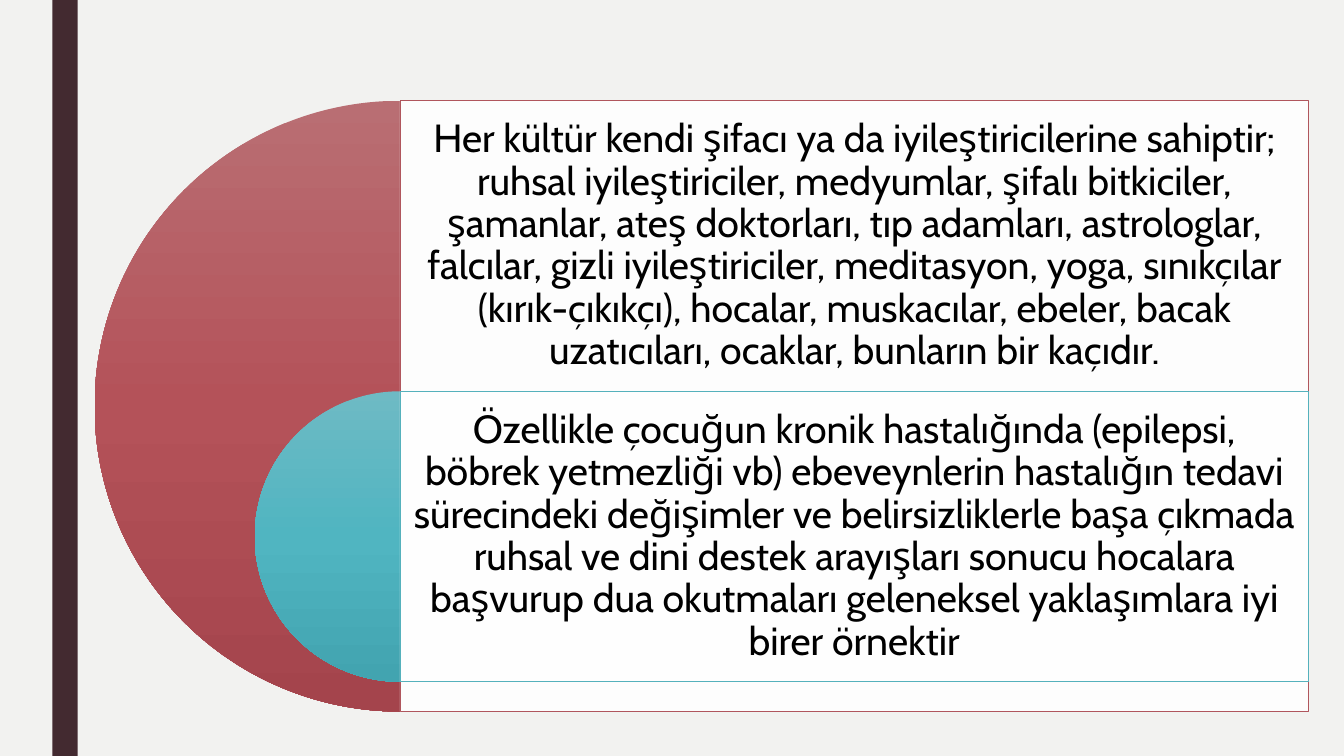
import copy
from dataclasses import dataclass

import pptx
import pptx.dml.color
import pptx.enum.shapes
import pptx.enum.text
import pptx.oxml.ns
import pptx.presentation
import pptx.shapes.autoshape
import pptx.slide
import pptx.util

Cm = pptx.util.Cm
RGBColor = pptx.dml.color.RGBColor
Shape = pptx.enum.shapes.MSO_SHAPE


@dataclass(frozen=True)
class Theme:
    background: str = "F2F2F0"
    bar: str = "432A30"
    panel: str = "FFFFFF"
    panel_opacity: int = 90
    text: str = "000000"
    font: str = "Cabin"
    text_size: int = 28
    line_width: float = 0.5


@dataclass(frozen=True)
class Layer:
    """A half disc with its panel; the text fills the panel's top."""

    top: float
    diameter: float
    gradient: tuple[str, str, str]
    outline: str
    text: str


THEME = Theme()

# Lengths in centimetres
SLIDE_WIDTH, SLIDE_HEIGHT = 33.87, 19.05
BAR_LEFT, BAR_WIDTH = 1.32, 0.64
PANEL_LEFT, PANEL_WIDTH = 10.08, 22.89
TOP, TEXT_HEIGHT, TEXT_INSET = 2.54, 7.32, 0.3

LAYERS = (
    Layer(
        TOP, 15.39, ("B96E73", "B45259", "A4444C"), "B0565D",
        "Her kültür kendi şifacı ya da iyileştiricilerine sahiptir; ruhsal "
        "iyileştiriciler, medyumlar, şifalı bitkiciler, şamanlar, ateş doktorları, "
        "tıp adamları, astrologlar, falcılar, gizli iyileştiriciler, meditasyon, "
        "yoga, sınıkçılar (kırık-çıkıkçı), hocalar, muskacılar, ebeler, bacak "
        "uzatıcıları, ocaklar, bunların bir kaçıdır.",
    ),
    Layer(
        TOP + TEXT_HEIGHT, TEXT_HEIGHT, ("6EBAC4", "50B5C1", "42A4B0"), "55B1BC",
        "Özellikle çocuğun kronik hastalığında (epilepsi, böbrek yetmezliği vb) "
        "ebeveynlerin hastalığın tedavi sürecindeki değişimler ve belirsizliklerle "
        "başa çıkmada ruhsal ve dini destek arayışları sonucu hocalara başvurup dua "
        "okutmaları geleneksel yaklaşımlara iyi birer örnektir",
    ),
)


def add_plain_shape(
    slide: pptx.slide.Slide, kind: Shape,
    left: float, top: float, width: float, height: float,
) -> pptx.shapes.autoshape.Shape:
    shape = slide.shapes.add_shape(kind, Cm(left), Cm(top), Cm(width), Cm(height))
    shape.shadow.inherit = False
    shape.line.fill.background()
    return shape


def fill_solid(shape: pptx.shapes.autoshape.Shape, color: str) -> None:
    shape.fill.solid()
    shape.fill.fore_color.rgb = RGBColor.from_string(color)


def add_half_disc(slide: pptx.slide.Slide, layer: Layer) -> None:
    disc = add_plain_shape(
        slide, Shape.PIE, PANEL_LEFT - layer.diameter / 2, layer.top,
        layer.diameter, layer.diameter,
    )
    # Angles of 90 and 270 degrees
    disc.adjustments[0], disc.adjustments[1] = 54, 162

    # Vertical gradient with a third stop
    disc.fill.gradient()
    disc.fill.gradient_angle = 270
    stop_list = disc.element.spPr.find(".//" + pptx.oxml.ns.qn("a:gsLst"))
    stop_list.append(copy.deepcopy(stop_list[0]))
    for index, (stop, color) in enumerate(zip(disc.fill.gradient_stops, layer.gradient)):
        stop.position = index / 2
        stop.color.rgb = RGBColor.from_string(color)


def add_panel(slide: pptx.slide.Slide, layer: Layer) -> None:
    panel = add_plain_shape(
        slide, Shape.RECTANGLE, PANEL_LEFT, layer.top, PANEL_WIDTH, layer.diameter
    )
    fill_solid(panel, THEME.panel)
    color = panel.element.spPr.find(".//" + pptx.oxml.ns.qn("a:srgbClr"))
    alpha = color.makeelement(pptx.oxml.ns.qn("a:alpha"))
    alpha.set("val", str(THEME.panel_opacity * 1000))
    color.append(alpha)
    panel.line.color.rgb = RGBColor.from_string(layer.outline)
    panel.line.width = pptx.util.Pt(THEME.line_width)


def add_panel_text(slide: pptx.slide.Slide, layer: Layer) -> None:
    box = slide.shapes.add_textbox(
        Cm(PANEL_LEFT), Cm(layer.top), Cm(PANEL_WIDTH), Cm(TEXT_HEIGHT)
    )
    frame = box.text_frame
    frame.word_wrap = True
    frame.vertical_anchor = pptx.enum.text.MSO_ANCHOR.MIDDLE
    frame.margin_left = frame.margin_right = Cm(TEXT_INSET)
    frame.margin_top = frame.margin_bottom = Cm(TEXT_INSET)
    paragraph = frame.paragraphs[0]
    paragraph.text = layer.text
    paragraph.alignment = pptx.enum.text.PP_ALIGN.CENTER
    paragraph.line_spacing = 0.9
    paragraph.font.name = THEME.font
    paragraph.font.size = pptx.util.Pt(THEME.text_size)
    paragraph.font.color.rgb = RGBColor.from_string(THEME.text)


def build_presentation() -> pptx.presentation.Presentation:
    presentation = pptx.Presentation()
    presentation.slide_width = Cm(SLIDE_WIDTH)
    presentation.slide_height = Cm(SLIDE_HEIGHT)
    slide = presentation.slides.add_slide(presentation.slide_layouts[6])

    # Background and side bar
    slide.background.fill.solid()
    slide.background.fill.fore_color.rgb = RGBColor.from_string(THEME.background)
    bar = add_plain_shape(slide, Shape.RECTANGLE, BAR_LEFT, 0, BAR_WIDTH, SLIDE_HEIGHT)
    fill_solid(bar, THEME.bar)

    # Nested half discs with their panels
    for layer in LAYERS:
        add_half_disc(slide, layer)
        add_panel(slide, layer)
        add_panel_text(slide, layer)
    return presentation


if __name__ == "__main__":
    build_presentation().save("out.pptx")
